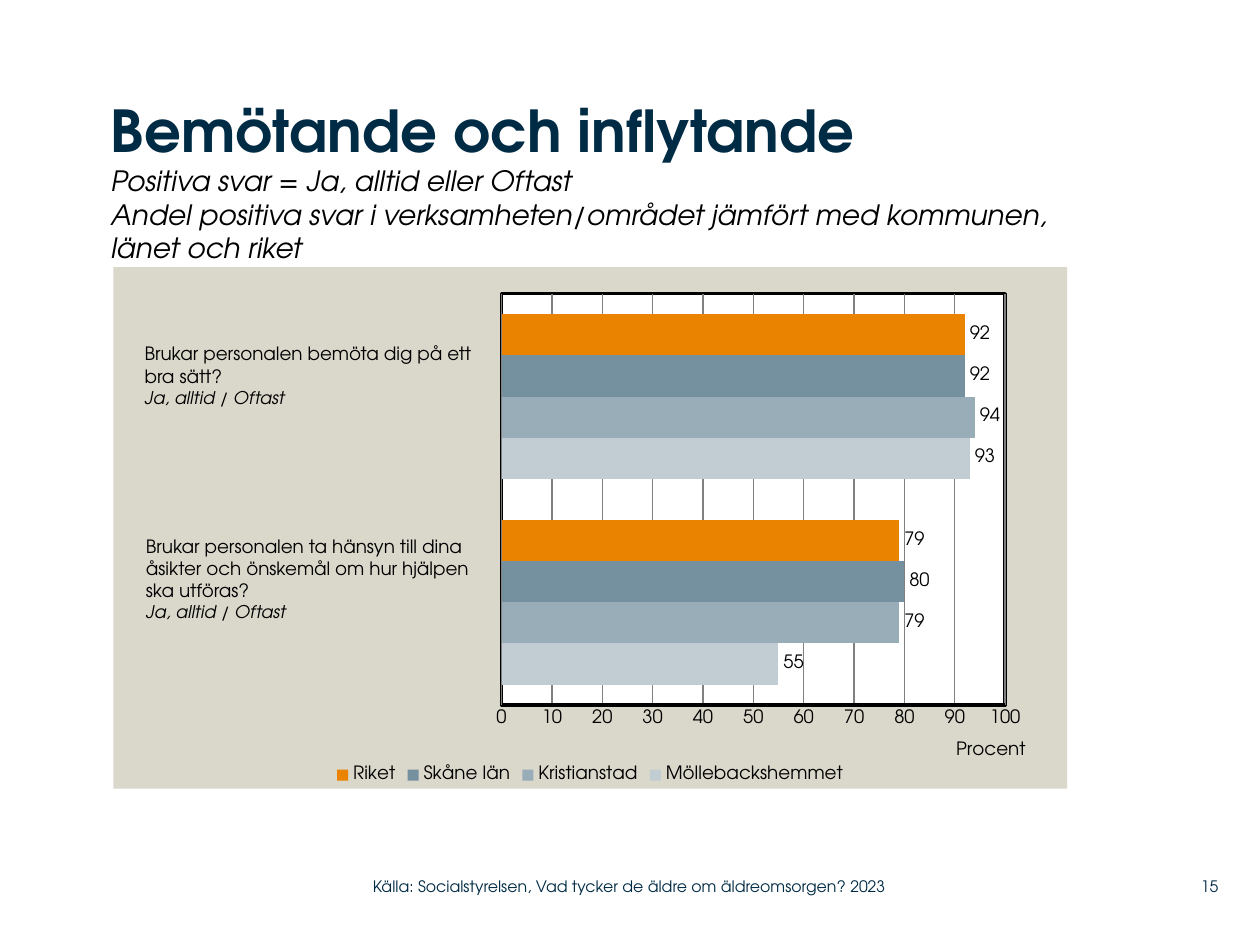
import pptx
import pptx.chart.data
import pptx.dml.color
import pptx.enum.chart
import pptx.enum.text
import pptx.oxml
import pptx.oxml.ns
import pptx.util
from pptx.util import Inches

FONT = "TeX Gyre Adventor"
NAVY, BLACK = "002B45", "000000"
ALIGN = pptx.enum.text.PP_ALIGN
ANCHOR = pptx.enum.text.MSO_ANCHOR


def color(hex_string):
    return pptx.dml.color.RGBColor.from_string(hex_string)


def set_font(font, size, hex_string, bold=False, italic=False):
    values = {"name": FONT, "size": pptx.util.Pt(size), "bold": bold, "italic": italic}
    for name, value in values.items():
        setattr(font, name, value)
    font.color.rgb = color(hex_string)


presentation = pptx.Presentation()
presentation.slide_width, presentation.slide_height = Inches(10), Inches(7.5)
slide = presentation.slides.add_slide(presentation.slide_layouts[5])

# Chart data: the first series is drawn at the bottom of each group
series_values = {
    "Möllebackshemmet": ((55, 93), "C2CDD3"),
    "Kristianstad": ((79, 94), "99ADB9"),
    "Skåne län": ((80, 92), "75909F"),
    "Riket": ((79, 92), "E98300"),
}
chart_data = pptx.chart.data.CategoryChartData()
chart_data.categories = ["1", "2"]
for name, (values, _) in series_values.items():
    chart_data.add_series(name, values)
chart = slide.shapes.add_chart(
    pptx.enum.chart.XL_CHART_TYPE.BAR_CLUSTERED,
    Inches(0.9), Inches(2.12), Inches(7.57), Inches(4.14), chart_data).chart
chart.has_title = False
set_font(chart.font, 10.5, BLACK)

# Bars and value labels
plot = chart.plots[0]
plot.gap_width, plot.overlap, plot.vary_by_categories = 100, 0, False
for series in plot.series:
    series.format.fill.solid()
    series.format.fill.fore_color.rgb = color(series_values[series.name][1])
    labels = series.data_labels
    labels.show_value = True
    labels.position = pptx.enum.chart.XL_LABEL_POSITION.OUTSIDE_END
    set_font(labels.font, 10.5, BLACK)

# Axes and legend
tick_none = pptx.enum.chart.XL_TICK_MARK.NONE
chart.category_axis.visible = False
axis = chart.value_axis
axis_values = {"minimum_scale": 0, "maximum_scale": 100, "major_unit": 10,
               "major_tick_mark": tick_none, "minor_tick_mark": tick_none,
               "has_major_gridlines": True}
for name, value in axis_values.items():
    setattr(axis, name, value)
axis.format.line.color.rgb = color(BLACK)
axis.format.line.width = pptx.util.Pt(2)
axis.major_gridlines.format.line.color.rgb = color("808080")
axis.major_gridlines.format.line.width = pptx.util.Pt(0.75)
set_font(axis.tick_labels.font, 10.5, BLACK)
axis.axis_title.text_frame.text = "Procent"
set_font(axis.axis_title.text_frame.paragraphs[0].runs[0].font, 10.5, BLACK)
chart.has_legend = True
chart.legend.position = pptx.enum.chart.XL_LEGEND_POSITION.BOTTOM
chart.legend.include_in_layout = False
set_font(chart.legend.font, 10.5, BLACK)

# Placement of the plot and the axis title, as shares of the chart
namespaces = pptx.oxml.ns.nsdecls("c", "a")
qn = pptx.oxml.ns.qn
chart_space = chart.element
plot_area = chart_space.find(".//" + qn("c:plotArea"))
title = axis.axis_title.element
plot_layout = {"layoutTarget": "inner", "xMode": "edge", "yMode": "edge",
               "x": 0.407, "y": 0.051, "w": 0.528, "h": 0.789}
title_layout = {"xMode": "edge", "yMode": "edge", "x": 0.88, "y": 0.9}
for parent, layout, index in ((plot_area, plot_layout, 0), (title, title_layout, 1)):
    for old_layout in parent.findall(qn("c:layout")):
        parent.remove(old_layout)
    parts = "".join(f'<c:{key} val="{value}"/>' for key, value in layout.items())
    parent.insert(index, pptx.oxml.parse_xml(
        f"<c:layout {namespaces}><c:manualLayout>{parts}</c:manualLayout></c:layout>"))

# Chart and plot backgrounds
fill_xml = '<c:spPr {}><a:solidFill><a:srgbClr val="{}"/></a:solidFill>{}</c:spPr>'
frame = ('<a:ln w="25400"><a:solidFill><a:srgbClr val="000000"/>'
         "</a:solidFill></a:ln>")
plot_area.append(pptx.oxml.parse_xml(fill_xml.format(namespaces, "FFFFFF", frame)))
chart_space.find(qn("c:chart")).addnext(pptx.oxml.parse_xml(
    fill_xml.format(namespaces, "DAD7CB", "<a:ln><a:noFill/></a:ln>")))

# Title with subtitle lines
heading = slide.shapes.title
heading.left, heading.top = Inches(0.88), Inches(0.75)
heading.width, heading.height = Inches(8.04), Inches(1.2)
text_frame = heading.text_frame
frame_values = {"margin_left": 0, "margin_right": 0, "margin_top": 0,
                "margin_bottom": 0, "word_wrap": True,
                "auto_size": pptx.enum.text.MSO_AUTO_SIZE.NONE,
                "vertical_anchor": ANCHOR.TOP}
for name, value in frame_values.items():
    setattr(text_frame, name, value)
paragraph = text_frame.paragraphs[0]
paragraph.alignment = ALIGN.LEFT
title_lines = [
    ("Bemötande och inflytande", 33, NAVY, True, False),
    ("Positiva svar = Ja, alltid eller Oftast", 16, BLACK, False, True),
    ("Andel positiva svar i verksamheten/området jämfört med kommunen, "
     "länet och riket", 16, BLACK, False, True),
]
for number, (text, *style) in enumerate(title_lines):
    if number:
        paragraph.add_line_break()
    run = paragraph.add_run()
    run.text = text
    set_font(run.font, *style)

# Questions beside the bars, then source and page number
answer = ("Ja, alltid / Oftast", 10, BLACK, False, True)
text_boxes = [
    ((1.05, 2.67, 2.97, 0.81), None, ALIGN.LEFT,
     [("Brukar personalen bemöta dig på ett", 10.5, BLACK),
      ("bra sätt?", 10.5, BLACK), answer]),
    ((1.06, 4.2, 3.01, 0.98), None, ALIGN.LEFT,
     [("Brukar personalen ta hänsyn till dina", 10.5, BLACK),
      ("åsikter och önskemål om hur hjälpen", 10.5, BLACK),
      ("ska utföras?", 10.5, BLACK), answer]),
    ((9.2, 6.89, 0.47, 0.29), 0, ALIGN.RIGHT, [("15", 9, NAVY)]),
    ((2.96, 6.89, 4.43, 0.29), 0, ALIGN.LEFT,
     [("Källa: Socialstyrelsen, Vad tycker de äldre om äldreomsorgen? 2023", 9, NAVY)]),
]
for position, margin, alignment, lines in text_boxes:
    text_frame = slide.shapes.add_textbox(*map(Inches, position)).text_frame
    text_frame.word_wrap = True
    if margin is not None:
        text_frame.vertical_anchor = ANCHOR.MIDDLE
        for side in ("left", "right", "top", "bottom"):
            setattr(text_frame, "margin_" + side, margin)
    for number, (text, *style) in enumerate(lines):
        paragraph = text_frame.add_paragraph() if number else text_frame.paragraphs[0]
        paragraph.alignment = alignment
        run = paragraph.add_run()
        run.text = text
        set_font(run.font, *style)

presentation.save("out.pptx")
